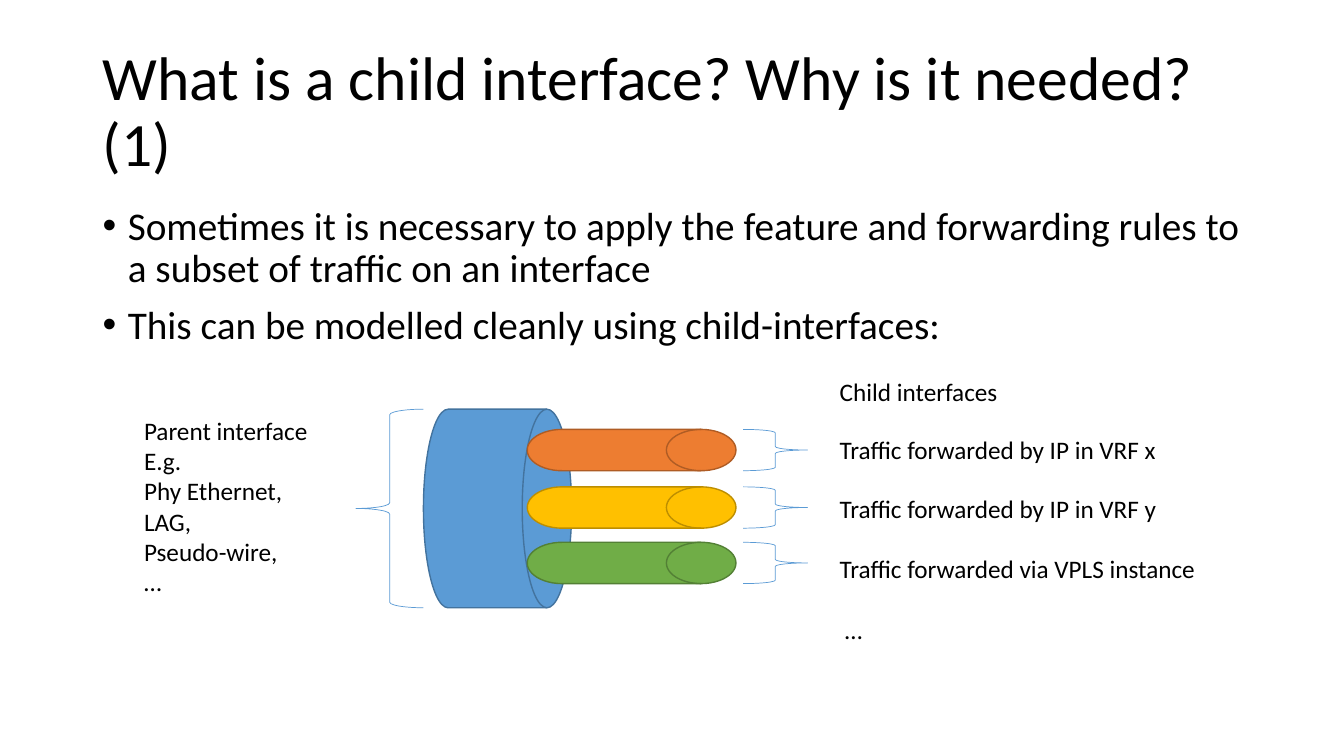
from lxml.etree import SubElement
from pptx import Presentation
from pptx.dml.color import RGBColor
from pptx.enum.shapes import MSO_SHAPE
from pptx.enum.text import MSO_ANCHOR, MSO_AUTO_SIZE, PP_ALIGN
from pptx.oxml.ns import qn
from pptx.util import Inches, Pt

BLACK = RGBColor(0x00, 0x00, 0x00)
BLUE = RGBColor(0x5B, 0x9B, 0xD5)
NAVY = RGBColor(0x43, 0x73, 0x9E)
ORANGE = RGBColor(0xED, 0x7D, 0x31)
RUST = RGBColor(0xAF, 0x5C, 0x24)
GOLD = RGBColor(0xFF, 0xC0, 0x00)
OCHRE = RGBColor(0xBD, 0x8E, 0x00)
GREEN = RGBColor(0x70, 0xAD, 0x47)
MOSS = RGBColor(0x53, 0x80, 0x35)

TITLE = "What is a child interface? Why is it needed? (1)"
POINTS = [
    "Sometimes it is necessary to apply the feature and forwarding rules to "
    "a subset of traffic on an interface",
    "This can be modelled cleanly using child-interfaces:",
]
PARENT = ["Parent interface", "E.g.", "Phy Ethernet, LAG,", "Pseudo-wire,", "…"]
# top, fill, line
PIPES = [(4.26, ORANGE, RUST), (4.83, GOLD, OCHRE), (5.38, GREEN, MOSS)]
# left, top, width, lines
LABELS = [
    (1.33, 4.07, 2.02, PARENT),
    (8.23, 3.68, 2.02, ["Child interfaces"]),
    (8.23, 4.26, 4.11, ["Traffic forwarded by IP in VRF x"]),
    (8.23, 4.84, 4.11, ["Traffic forwarded by IP in VRF y"]),
    (8.23, 5.44, 4.11, ["Traffic forwarded via VPLS instance"]),
    (8.28, 6.05, 4.11, ["…"]),
]
LINE_HIGH = 0.3
PAD = 0.1
PIPE_HIGH = 0.41
TRUNK_TOP, TRUNK_HIGH = 4.06, 1.97
DRUM = MSO_SHAPE.FLOWCHART_DIRECT_ACCESS_STORAGE


def write(frame, lines, size):
    frame.word_wrap = True
    frame.text = "\n".join(lines)
    for para in frame.paragraphs:
        para.alignment = PP_ALIGN.LEFT
        for run in para.runs:
            run.font.name = "Calibri"
            run.font.size = Pt(size)
            run.font.color.rgb = BLACK


def add_text(slide, box, lines, size):
    frame = slide.shapes.add_textbox(*map(Inches, box)).text_frame
    write(frame, lines, size)
    return frame


def add_bullet(para):
    para.line_spacing = 0.9
    para.space_before = Pt(10)
    props = para._p.get_or_add_pPr()
    props.set("marL", str(Inches(0.25)))
    props.set("indent", str(-Inches(0.25)))
    SubElement(props, qn("a:buFont"), typeface="Arial")
    SubElement(props, qn("a:buChar"), char="•")


def add_part(slide, kind, box, line, width, fill=None):
    """Add a drum, or a brace when there is no fill."""
    part = slide.shapes.add_shape(kind, *map(Inches, box))
    part.shadow.inherit = False
    part.line.color.rgb = line
    part.line.width = Pt(width)
    if fill is None:
        part.fill.background()
    else:
        part.fill.solid()
        part.fill.fore_color.rgb = fill


def main():
    deck = Presentation()
    deck.slide_width, deck.slide_height = Inches(13.33), Inches(7.5)
    slide = deck.slides.add_slide(deck.slide_layouts[5])

    title = slide.shapes.title
    title.left, title.top = Inches(0.92), Inches(0.4)
    title.width, title.height = Inches(11.74), Inches(1.45)
    write(title.text_frame, [TITLE], 44)
    title.text_frame.auto_size = MSO_AUTO_SIZE.NONE
    title.text_frame.vertical_anchor = MSO_ANCHOR.MIDDLE
    title.text_frame.paragraphs[0].line_spacing = 0.9

    body = add_text(slide, (0.92, 2, 11.5, 1.59), POINTS, 28)
    for para in body.paragraphs:
        add_bullet(para)

    add_part(slide, DRUM, (4.2, TRUNK_TOP, 1.47, TRUNK_HIGH), NAVY, 1, BLUE)
    add_part(slide, MSO_SHAPE.LEFT_BRACE,
             (3.53, TRUNK_TOP, 0.67, TRUNK_HIGH), BLUE, 0.5)
    for top, fill, line in PIPES:
        add_part(slide, DRUM, (5.23, top, 2.07, PIPE_HIGH), line, 1, fill)
        add_part(slide, MSO_SHAPE.RIGHT_BRACE,
                 (7.37, top, 0.64, PIPE_HIGH), BLUE, 0.5)

    for left, top, width, lines in LABELS:
        rows = 6 if lines is PARENT else 1  # one parent line wraps
        high = rows * LINE_HIGH + PAD
        frame = add_text(slide, (left, top, width, high), lines, 18)
        frame.auto_size = MSO_AUTO_SIZE.SHAPE_TO_FIT_TEXT

    deck.save("out.pptx")


if __name__ == "__main__":
    main()
